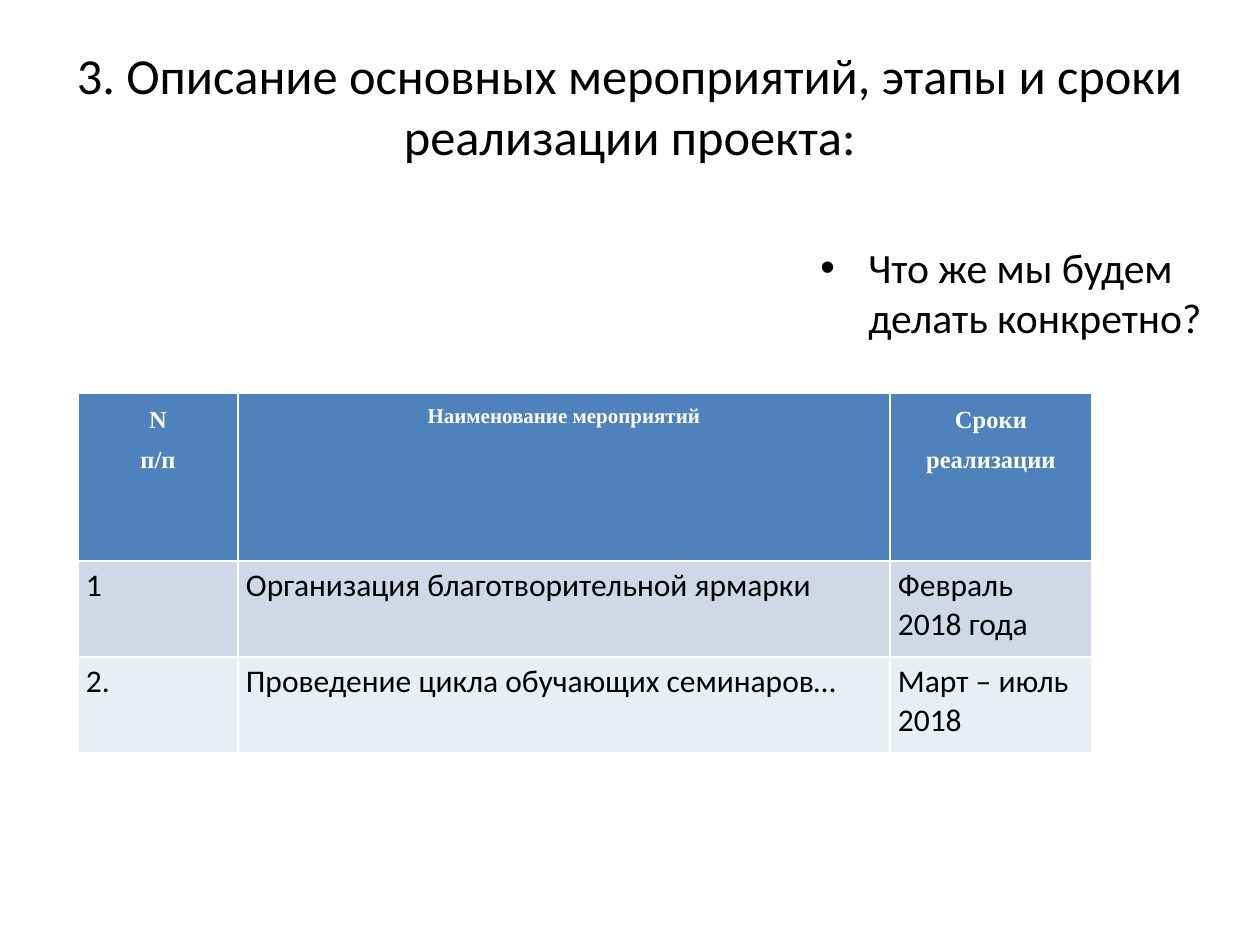
"""Build the slide on project activities, stages and dates."""
import pptx
import pptx.util
import pptx.dml.color
import pptx.enum.text
import pptx.oxml
import pptx.oxml.ns

PX = 914400 / 126
COLORS = {"text": "000000", "header": "4F81BD", "header_text": "FFFFFF",
          "bands": ["D0D8E8", "E9EDF4"]}
CENTER = pptx.enum.text.PP_ALIGN.CENTER


def px(*values):
    return [pptx.util.Emu(round(v * PX)) for v in values]


def style(p, size, color, name="Calibri", bold=False):
    p.font.size = pptx.util.Pt(size)
    p.font.name = name
    p.font.bold = bold
    p.font.color.rgb = pptx.dml.color.RGBColor.from_string(color)


prs = pptx.Presentation()
prs.slide_width, prs.slide_height = px(1260, 945)
s = prs.slides.add_slide(prs.slide_layouts[6])

tf = s.shapes.add_textbox(*px(63, 38, 1134, 158)).text_frame
tf.word_wrap = True
p = tf.paragraphs[0]
p.text = "3. Описание основных мероприятий, этапы и сроки реализации проекта:"
p.alignment = CENTER
style(p, 28.8, COLORS["text"])

rows = [
    ["N\nп/п", "Наименование мероприятий", "Сроки реализации"],
    ["1", "Организация благотворительной ярмарки", "Февраль 2018 года"],
    ["2.", "Проведение цикла обучающих семинаров…", "Март – июль 2018"],
]
widths = [160, 652, 202]
heights = [168, 96, 96]
header_sizes = [14, 12, 14]
table = s.shapes.add_table(
    len(rows), len(widths), *px(78, 393, sum(widths), sum(heights))).table
for column, width in zip(table.columns, px(*widths)):
    column.width = width
for row, height in zip(table.rows, px(*heights)):
    row.height = height

for i, texts in enumerate(rows):
    for j, text in enumerate(texts):
        cell = table.cell(i, j)
        cell.text = text
        header = i == 0
        fill = COLORS["header"] if header else COLORS["bands"][i - 1]
        cell.fill.solid()
        cell.fill.fore_color.rgb = pptx.dml.color.RGBColor.from_string(fill)
        side, edge = px(6, 0) if header else px(8, 6)
        cell.margin_left = cell.margin_right = side
        cell.margin_top = cell.margin_bottom = edge
        for p in cell.text_frame.paragraphs:
            if header:
                p.alignment = CENTER
                p.line_spacing = 1.5
                style(p, header_sizes[j], COLORS["header_text"], "Times New Roman", True)
            else:
                style(p, 18, COLORS["text"])

tf = s.shapes.add_textbox(*px(808, 236, 428, 128)).text_frame
tf.word_wrap = True
p = tf.paragraphs[0]
p.text = "Что же мы будем делать конкретно?"
style(p, 23.8, COLORS["text"])
indent = px(48)[0]
pPr = p._p.get_or_add_pPr()
pPr.set("marL", str(indent))
pPr.set("indent", str(-indent))
for tag, key, value in [("a:buFont", "typeface", "Arial"), ("a:buChar", "char", "•")]:
    bullet = pptx.oxml.parse_xml(f'<{tag} {pptx.oxml.ns.nsdecls("a")} {key}="{value}"/>')
    pPr.insert_element_before(bullet, "a:tabLst", "a:defRPr", "a:extLst")

prs.save("out.pptx")
